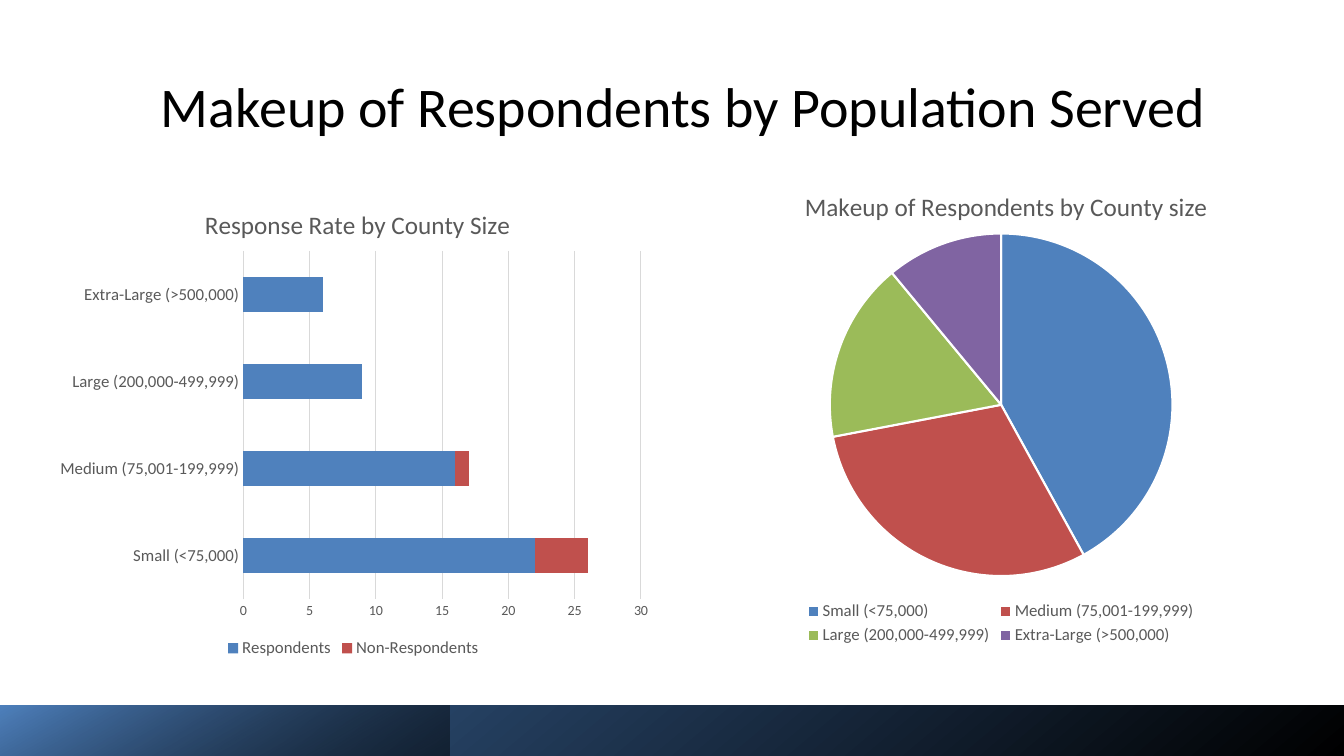
from lxml.etree import SubElement
from pptx import Presentation
from pptx.chart.data import CategoryChartData as Data
from pptx.dml.color import RGBColor as RGB
from pptx.enum.chart import XL_CHART_TYPE as Kind, XL_LEGEND_POSITION as Side, XL_TICK_MARK as Tick
from pptx.enum.shapes import MSO_SHAPE as Shape
from pptx.enum.text import MSO_ANCHOR as Anchor, PP_ALIGN as Align
from pptx.oxml import parse_xml
from pptx.oxml.ns import nsdecls, qn
from pptx.util import Inches, Pt

FONT = "Calibri"
BLACK = RGB(0x00, 0x00, 0x00)
WHITE = RGB(0xFF, 0xFF, 0xFF)
NAVY = RGB(0x37, 0x60, 0x92)
BLUE = RGB(0x4F, 0x81, 0xBD)
RED = RGB(0xC0, 0x50, 0x4D)
GREEN = RGB(0x9B, 0xBB, 0x59)
PURPLE = RGB(0x80, 0x64, 0xA2)
GRAY = RGB(0x59, 0x59, 0x59)
SILVER = RGB(0xD9, 0xD9, 0xD9)
COLORS = [BLUE, RED, GREEN, PURPLE]
SIZES = ["Small (<75,000)", "Medium (75,001-199,999)",
         "Large (200,000-499,999)", "Extra-Large (>500,000)"]


def set_font(font, size, color):
    font.name = FONT
    font.size = Pt(size)
    font.bold = False
    font.color.rgb = color


def set_title(slide, text):
    title = slide.shapes.title
    title.left, title.top = Inches(1.21), Inches(0.44)
    title.width, title.height = Inches(11.13), Inches(1.2)
    frame = title.text_frame
    frame.text = text
    frame.vertical_anchor = Anchor.MIDDLE
    line = frame.paragraphs[0]
    line.alignment = Align.CENTER
    set_font(line.runs[0].font, 40, BLACK)


def add_band(slide, width, color, angle, alpha=100):
    band = slide.shapes.add_shape(Shape.RECTANGLE, 0, Inches(7), Inches(width), Inches(0.51))
    band.shadow.inherit = False
    band.line.fill.background()
    band.fill.gradient()
    band.fill.gradient_angle = 360 - angle
    stops = band.fill.gradient_stops
    for stop, tint, place in zip(stops, (BLACK, color), (0, 1)):
        stop.color.rgb = tint
        stop.position = place
    if alpha < 100:
        dark = band.element.find(".//" + qn("a:srgbClr"))
        SubElement(dark, qn("a:alpha"), val=str(alpha * 1000))


def place(parent, index, inner=False, **box):
    old = parent.find(qn("c:layout"))
    if old is not None:
        parent.remove(old)
    target = '<c:layoutTarget val="inner"/>' if inner else ""
    modes = "".join(f'<c:{key}Mode val="edge"/>' for key in "xy")
    spans = "".join(f'<c:{key} val="{val}"/>' for key, val in box.items())
    parent.insert(index, parse_xml(
        f'<c:layout {nsdecls("c")}><c:manualLayout>{target}{modes}{spans}'
        '</c:manualLayout></c:layout>'))


def add_chart(slide, kind, box, title, series, spot, plot):
    data = Data()
    data.categories = SIZES
    for name, vals in series.items():
        data.add_series(name, vals)
    chart = slide.shapes.add_chart(kind, *map(Inches, box), data).chart
    set_font(chart.font, 10, BLACK)
    chart.has_title = True
    head = chart.chart_title
    head.text_frame.text = title
    set_font(head.text_frame.paragraphs[0].runs[0].font, 18, GRAY)
    head.include_in_layout = False
    chart.has_legend = True
    chart.legend.position = Side.BOTTOM
    chart.legend.include_in_layout = False
    set_font(chart.legend.font, 12, GRAY)
    place(head.element, 1, x=spot[0], y=spot[1])
    area = chart.element.find(".//" + qn("c:plotArea"))
    place(area, 0, True, **dict(zip("xywh", plot)))
    chart.plots[0].vary_by_categories = kind == Kind.PIE
    return chart


def style_axis(axis, size):
    axis.major_tick_mark = axis.minor_tick_mark = Tick.NONE
    set_font(axis.tick_labels.font, size, GRAY)


def style_line(line):
    line.color.rgb = SILVER
    line.width = Pt(0.75)


def add_bars(slide):
    series = {"Respondents": (22, 16, 9, 6), "Non-Respondents": (4, 1, 0, 0)}
    chart = add_chart(slide, Kind.BAR_STACKED, (0.47, 1.77, 6.07, 4.8),
                      "Response Rate by County Size", series,
                      (0.25, 0.05), (0.32, 0.15, 0.65, 0.72))
    plot = chart.plots[0]
    plot.gap_width, plot.overlap = 150, 100
    for bars, color in zip(plot.series, COLORS):
        bars.format.fill.solid()
        bars.format.fill.fore_color.rgb = color
    style_axis(chart.category_axis, 12)
    style_line(chart.category_axis.format.line)
    values = chart.value_axis
    style_axis(values, 10)
    values.minimum_scale, values.maximum_scale, values.major_unit = 0, 30, 5
    values.format.line.fill.background()
    style_line(values.major_gridlines.format.line)


def add_pie(slide):
    chart = add_chart(slide, Kind.PIE, (7, 1.64, 5.86, 4.8),
                      "Makeup of Respondents by County size",
                      {"Series 1": (42, 30, 17, 11)},
                      (0.16, 0.04), (0.21, 0.14, 0.58, 0.71))
    for index, color in enumerate(COLORS):
        slice_ = chart.plots[0].series[0].points[index].format
        slice_.fill.solid()
        slice_.fill.fore_color.rgb = color
        slice_.line.color.rgb = WHITE
        slice_.line.width = Pt(1.5)


def main():
    deck = Presentation()
    deck.slide_width, deck.slide_height = Inches(13.33), Inches(7.5)
    slide = deck.slides.add_slide(deck.slide_layouts[5])
    set_title(slide, "Makeup of Respondents by Population Served")
    add_band(slide, 13.33, NAVY, 230)
    add_band(slide, 4.46, BLUE, 240, 46)
    add_bars(slide)
    add_pie(slide)
    deck.save("out.pptx")


if __name__ == "__main__":
    main()
